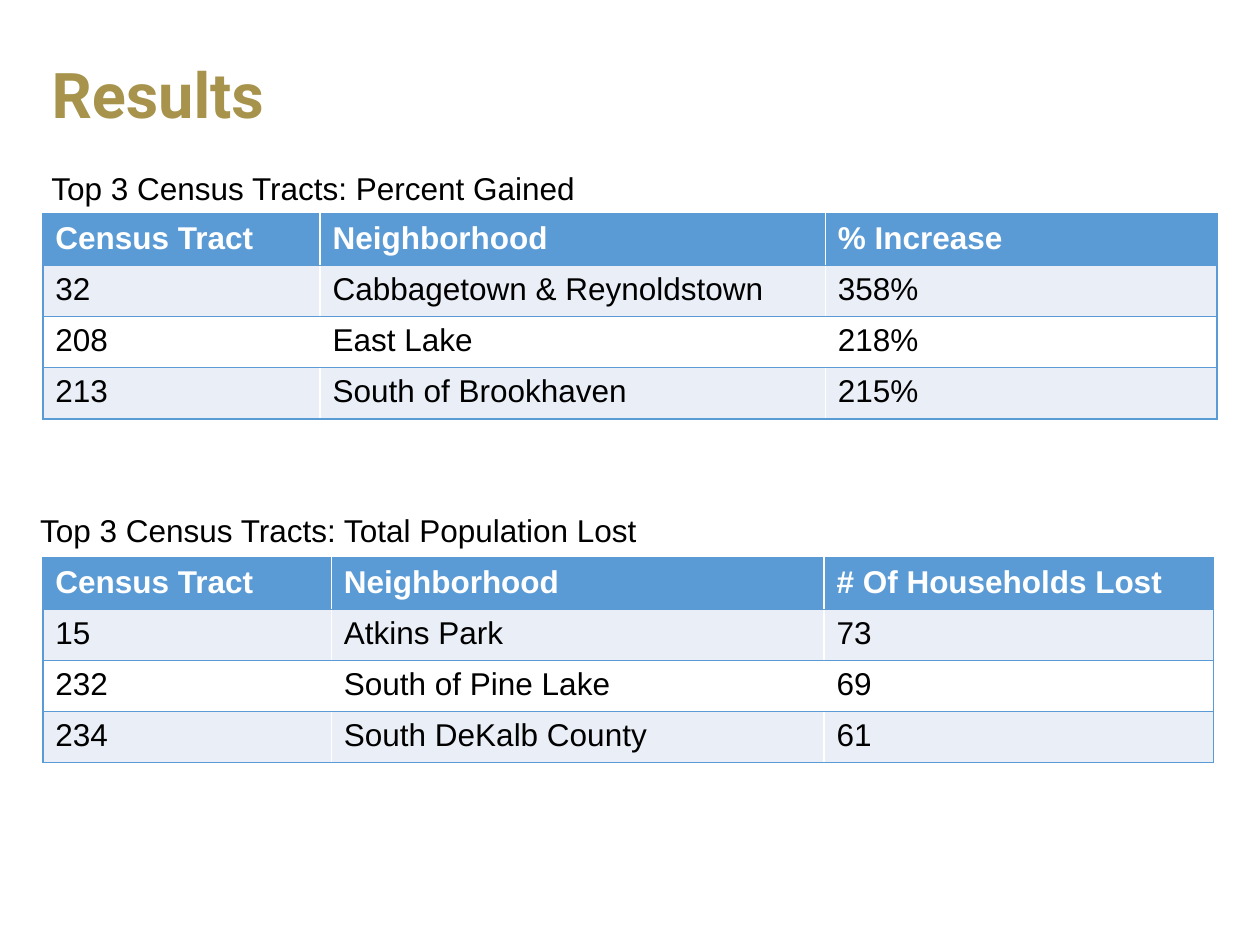
"""Build the Results slide: a title and two captioned census tract tables."""
from dataclasses import dataclass

import pptx
import pptx.dml.color
import pptx.enum.text
import pptx.oxml
import pptx.oxml.ns
import pptx.util

COLS, ROWS = 100, 75
BLUE, BAND, WHITE, BLACK, GOLD = "5B9BD5", "EAEFF7", "FFFFFF", "000000", "A7934B"
ROW_HEIGHT = 4.06
BODY = {"name": "Arial", "size": pptx.util.Pt(18), "bold": False}
HEADER = {**BODY, "bold": True}
TITLE = {"name": "Roboto", "size": pptx.util.Pt(36), "bold": True}


@dataclass(frozen=True)
class Box:
    """A rectangle in grid columns and rows."""
    x: float
    y: float
    w: float
    h: float


@dataclass(frozen=True)
class TractTable:
    """A captioned table of census tracts."""
    caption: str
    caption_box: Box
    x: float
    y: float
    widths: tuple[float, ...]
    rows: tuple[tuple[str, ...], ...]


TABLES = (
    TractTable(
        "Top 3 Census Tracts: Percent Gained", Box(3.1, 12.9, 54.6, 4),
        3.4, 17, (22, 40.1, 31.1),
        (("Census Tract", "Neighborhood", "% Increase"),
         ("32", "Cabbagetown & Reynoldstown", "358%"),
         ("208", "East Lake", "218%"),
         ("213", "South of Brookhaven", "215%"))),
    TractTable(
        "Top 3 Census Tracts: Total Population Lost", Box(2.2, 40.1, 59.4, 4),
        3.4, 44.3, (22.9, 39.1, 30.9),
        (("Census Tract", "Neighborhood", "# Of Households Lost"),
         ("15", "Atkins Park", "73"),
         ("232", "South of Pine Lake", "69"),
         ("234", "South DeKalb County", "61"))),
)


def rgb(color: str) -> pptx.dml.color.RGBColor:
    """Turn a hex string into a colour."""
    return pptx.dml.color.RGBColor.from_string(color)


def place(prs, box: Box) -> tuple[int, ...]:
    """Convert a grid box to left, top, width and height."""
    unit_x, unit_y = prs.slide_width / COLS, prs.slide_height / ROWS
    return (round(box.x * unit_x), round(box.y * unit_y),
            round(box.w * unit_x), round(box.h * unit_y))


def write(tf, text: str, values: dict, color: str) -> None:
    """Write one formatted paragraph into a text frame."""
    p = tf.paragraphs[0]
    r = p.add_run()
    r.text = text
    for name, value in values.items():
        setattr(r.font, name, value)
    r.font.color.rgb = rgb(color)


def add_borders(cell, sides: str) -> None:
    """Draw one-point blue lines on the given sides of a cell."""
    tc_pr = cell._tc.get_or_add_tcPr()
    for side in sides:
        tc_pr.append(pptx.oxml.parse_xml(
            f'<a:ln{side} {pptx.oxml.ns.nsdecls("a")} w="12700"><a:solidFill>'
            f'<a:srgbClr val="{BLUE}"/></a:solidFill></a:ln{side}>'))


def add_title(prs, s, text: str, box: Box) -> None:
    """Move and format the title placeholder."""
    sp = s.shapes.title
    sp.left, sp.top, sp.width, sp.height = place(prs, box)
    tf = sp.text_frame
    tf.vertical_anchor = pptx.enum.text.MSO_ANCHOR.MIDDLE
    write(tf, text, TITLE, GOLD)
    p = tf.paragraphs[0]
    p.alignment = pptx.enum.text.PP_ALIGN.LEFT
    p.line_spacing = 0.9


def add_caption(prs, s, text: str, box: Box) -> None:
    """Add the text above a table."""
    tf = s.shapes.add_textbox(*place(prs, box)).text_frame
    tf.word_wrap = True
    tf.auto_size = pptx.enum.text.MSO_AUTO_SIZE.SHAPE_TO_FIT_TEXT
    write(tf, text, BODY, BLACK)


def add_tract_table(prs, s, spec: TractTable) -> None:
    """Add a bordered, banded table."""
    box = Box(spec.x, spec.y, sum(spec.widths), ROW_HEIGHT * len(spec.rows))
    table = s.shapes.add_table(
        len(spec.rows), len(spec.widths), *place(prs, box)).table
    for column, width in zip(table.columns, spec.widths):
        column.width = round(width * prs.slide_width / COLS)
    last = len(spec.widths) - 1
    for i, row in enumerate(spec.rows):
        values, color = (BODY, BLACK) if i else (HEADER, WHITE)
        fill = (BAND if i % 2 else WHITE) if i else BLUE
        for j, text in enumerate(row):
            cell = table.cell(i, j)
            add_borders(cell, ("L" if j == 0 else "") + ("R" if j == last else "") + "TB")
            cell.fill.solid()
            cell.fill.fore_color.rgb = rgb(fill)
            write(cell.text_frame, text, values, color)


def main() -> None:
    """Build and save the slide."""
    prs = pptx.Presentation()
    prs.slide_width, prs.slide_height = pptx.util.Inches(10), pptx.util.Inches(7.5)
    s = prs.slides.add_slide(prs.slide_layouts[5])
    add_title(prs, s, "Results", Box(3.1, 2.2, 93.8, 11.1))
    for spec in TABLES:
        add_tract_table(prs, s, spec)
    for spec in TABLES:
        add_caption(prs, s, spec.caption, spec.caption_box)
    prs.save("out.pptx")


if __name__ == "__main__":
    main()
